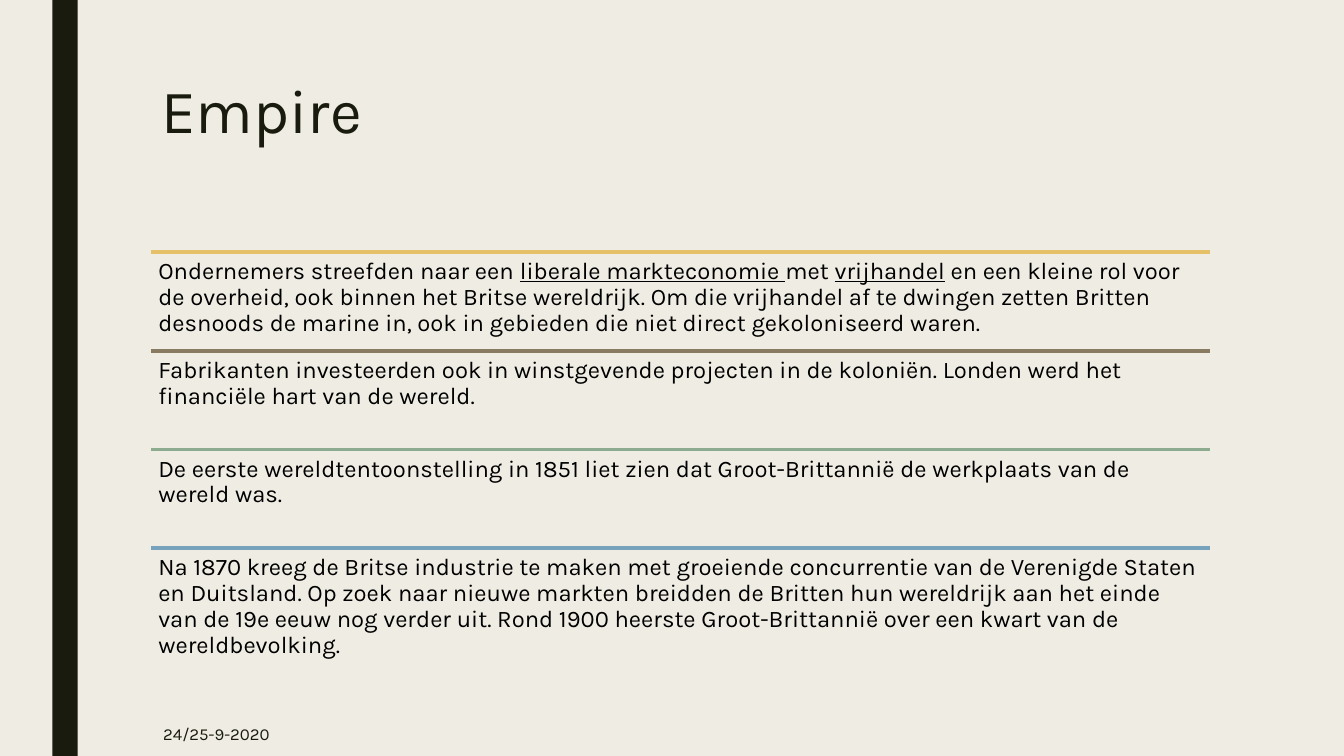
import pptx
import pptx.util
import pptx.dml.color
import pptx.enum.shapes
import pptx.enum.text
import pptx.oxml.ns
from lxml import etree
from pptx.util import Inches, Pt

COLORS = {
    "background": "EFEDE3",
    "dark": "191B0E",
    "text": "000000",
    "yellow": "E6C069",
    "brown": "897B61",
    "green": "8DAB8E",
    "blue": "77A2BB",
}
STATEMENTS = [
    ("yellow", [
        ("Ondernemers streefden naar een ", False),
        ("liberale markteconomie ", True),
        ("met ", False),
        ("vrijhandel", True),
        (" en een kleine rol voor de overheid, ook binnen het Britse wereldrijk. "
         "Om die vrijhandel af te dwingen zetten Britten desnoods de marine in, "
         "ook in gebieden die niet direct gekoloniseerd waren.", False)]),
    ("brown", [
        ("Fabrikanten investeerden ook in winstgevende projecten in de koloniën. "
         "Londen werd het financiële hart van de wereld.", False)]),
    ("green", [
        ("De eerste wereldtentoonstelling in 1851 liet zien dat Groot-Brittannië "
         "de werkplaats van de wereld was.", False)]),
    ("blue", [
        ("Na 1870 kreeg de Britse industrie te maken met groeiende concurrentie "
         "van de Verenigde Staten en Duitsland. Op zoek naar nieuwe markten "
         "breidden de Britten hun wereldrijk aan het einde van de 19e eeuw nog "
         "verder uit. Rond 1900 heerste Groot-Brittannië over een kwart van de "
         "wereldbevolking.", False)]),
]
LEFT, WIDTH, FIRST_TOP, ROW_HEIGHT = 1.5, 10.5, 2.5, 0.98


def rgb(name):
    return pptx.dml.color.RGBColor.from_string(COLORS[name])


def add_run(paragraph, text, size, color, underline=False):
    run = paragraph.add_run()
    run.text = text
    formats = {"name": "Karla", "size": Pt(size), "underline": underline}
    for attribute, value in formats.items():
        setattr(run.font, attribute, value)
    run.font.color.rgb = rgb(color)


deck = pptx.Presentation()
deck.slide_width, deck.slide_height = Inches(13.33), Inches(7.5)
slide = deck.slides.add_slide(deck.slide_layouts[5])
slide.background.fill.solid()
slide.background.fill.fore_color.rgb = rgb("background")

side_bar = slide.shapes.add_shape(
    pptx.enum.shapes.MSO_SHAPE.RECTANGLE, Inches(0.52), 0, Inches(0.25), Inches(7.5))
side_bar.shadow.inherit = False
side_bar.fill.solid()
side_bar.fill.fore_color.rgb = rgb("dark")
side_bar.line.fill.background()

title = slide.shapes.title
title_place = {"left": LEFT, "top": 0.75, "width": WIDTH, "height": 1.62}
for attribute, value in title_place.items():
    setattr(title, attribute, Inches(value))
title_frame = title.text_frame
title_frame.auto_size = pptx.enum.text.MSO_AUTO_SIZE.NONE
title_frame.vertical_anchor = pptx.enum.text.MSO_ANCHOR.TOP
title_line = title_frame.paragraphs[0]
title_line.alignment = pptx.enum.text.PP_ALIGN.LEFT
title_line.line_spacing = 0.89
add_run(title_line, "Empire", 44, "dark")

for row, (color, pieces) in enumerate(STATEMENTS):
    top = Inches(FIRST_TOP + row * ROW_HEIGHT)
    rule = slide.shapes.add_connector(
        pptx.enum.shapes.MSO_CONNECTOR.STRAIGHT,
        Inches(LEFT), top, Inches(LEFT + WIDTH), top)
    rule.line.color.rgb = rgb(color)
    rule.line.width = Pt(2.75)
    etree.SubElement(rule._element.spPr, pptx.oxml.ns.qn("a:effectLst"))

    statement = slide.shapes.add_textbox(
        Inches(LEFT), top, Inches(WIDTH), Inches(ROW_HEIGHT)).text_frame
    statement.word_wrap = True
    for side in ("left", "top", "right", "bottom"):
        setattr(statement, f"margin_{side}", Inches(0.07))
    statement.paragraphs[0].line_spacing = 0.9
    for text, underline in pieces:
        add_run(statement.paragraphs[0], text, 17, "text", underline)

date = slide.shapes.add_textbox(
    Inches(1.52), Inches(7.06), Inches(1.32), Inches(0.44)).text_frame
date.word_wrap = True
date.vertical_anchor = pptx.enum.text.MSO_ANCHOR.MIDDLE
date.paragraphs[0].space_after = Pt(6)
add_run(date.paragraphs[0], "24/25-9-2020", 12, "dark")

deck.save("out.pptx")
